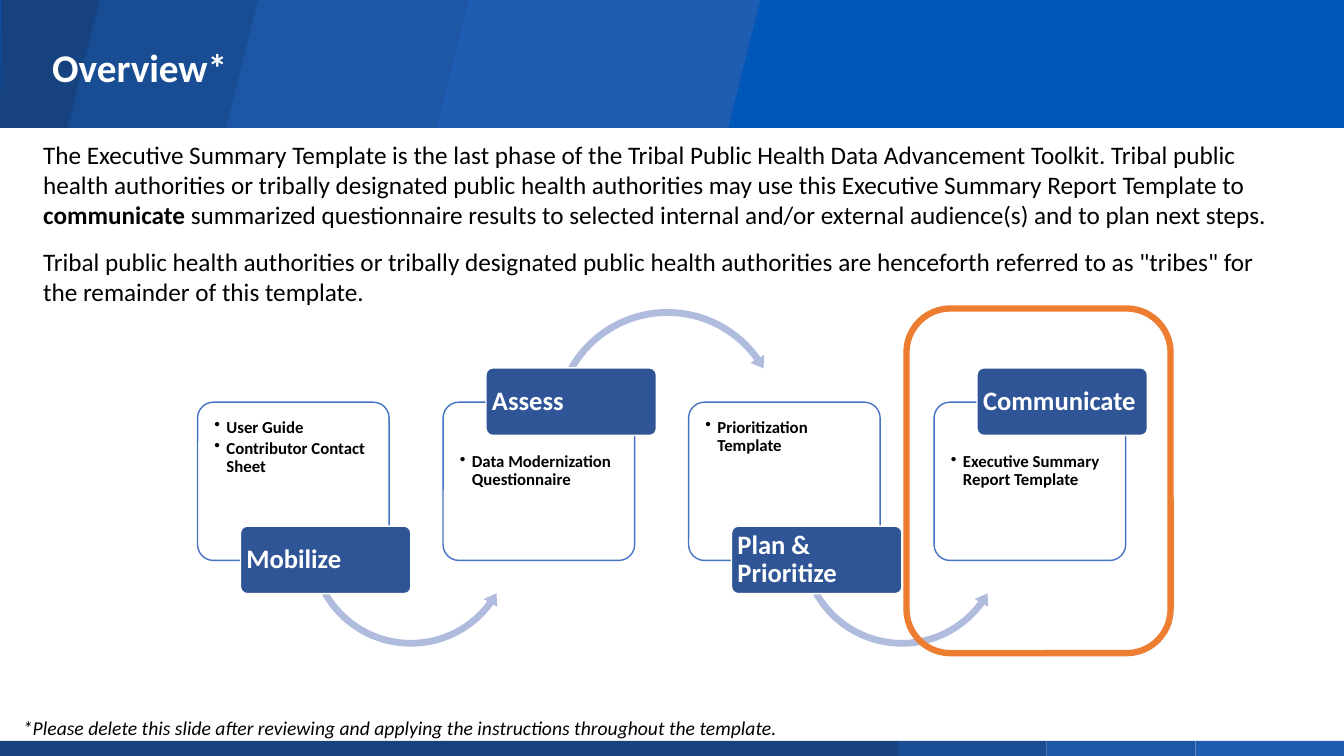
from lxml import etree
from pptx import Presentation
from pptx.dml.color import RGBColor
from pptx.enum.shapes import MSO_SHAPE
from pptx.enum.text import MSO_ANCHOR, PP_ALIGN
from pptx.oxml.ns import qn
from pptx.util import Inches, Pt

RECTANGLE = MSO_SHAPE.RECTANGLE
ROUNDED = MSO_SHAPE.ROUNDED_RECTANGLE
PARALLELOGRAM = MSO_SHAPE.PARALLELOGRAM
ARC_OVER = MSO_SHAPE.CIRCULAR_ARROW
ARC_UNDER = MSO_SHAPE.LEFT_CIRCULAR_ARROW
MIDDLE = MSO_ANCHOR.MIDDLE
TOP = MSO_ANCHOR.TOP
LEFT = PP_ALIGN.LEFT

FONT = "Calibri"
BLUE = "0057B7"
NAVY = "164380"
SHADES = ["194D93", "1C56A4", "1E5DB2"]
BANNER_HEIGHT = 1.27
FIRST_PANEL_LEFT = 1.96
PANEL_PITCH = 2.435
PANEL_TOP = 3.99

PHASES = [
    ("Mobilize", ["User Guide", "Contributor Contact Sheet"]),
    ("Assess", ["Data Modernization Questionnaire"]),
    ("Plan & Prioritize", ["Prioritization Template"]),
    ("Communicate", ["Executive Summary Report Template"]),
]
INTRODUCTION = [
    [
        ("The Executive Summary Template is the last phase of the Tribal Public Health "
         "Data Advancement Toolkit. Tribal public health authorities or tribally "
         "designated public health authorities may use this Executive Summary Report "
         "Template to ", False),
        ("communicate", True),
        (" summarized questionnaire results to selected internal and/or external "
         "audience(s) and to plan next steps.", False),
    ],
    [
        ("Tribal public health authorities or tribally designated public health "
         "authorities are henceforth referred to as \"tribes\" for the remainder of "
         "this template.", False),
    ],
]


def color(value):
    return RGBColor.from_string(value)


def add_block(slide, kind, box, fill=None, line=None, width=1, adjustments=()):
    shape = slide.shapes.add_shape(kind, *map(Inches, box))
    shape.shadow.inherit = False
    if fill:
        shape.fill.solid()
        shape.fill.fore_color.rgb = color(fill)
    else:
        shape.fill.background()
    if line:
        shape.line.color.rgb = color(line)
        shape.line.width = Pt(width)
    else:
        shape.line.fill.background()
    for index, value in enumerate(adjustments):
        shape.adjustments[index] = value
    return shape


def set_frame(shape, anchor, insets=(0.1, 0.05, 0.1, 0.05)):
    frame = shape.text_frame
    frame.word_wrap = True
    frame.vertical_anchor = anchor
    (frame.margin_left, frame.margin_top,
     frame.margin_right, frame.margin_bottom) = map(Inches, insets)
    return frame


def write(frame, paragraphs, size, text_color="000000", italic=False,
          spacing=1.0, after=0):
    for index, runs in enumerate(paragraphs):
        paragraph = frame.add_paragraph() if index else frame.paragraphs[0]
        paragraph.alignment = LEFT
        paragraph.line_spacing = spacing
        paragraph.space_after = Pt(after)
        for text, bold in runs:
            run = paragraph.add_run()
            run.text = text
            run.font.name = FONT
            run.font.size = Pt(size)
            run.font.bold = bold
            run.font.italic = italic
            run.font.color.rgb = color(text_color)


def add_text(slide, box, paragraphs, size, anchor=TOP, **style):
    textbox = slide.shapes.add_textbox(*map(Inches, box))
    write(set_frame(textbox, anchor), paragraphs, size, **style)


def add_bullets(frame):
    for paragraph in frame.paragraphs:
        properties = paragraph._p.get_or_add_pPr()
        properties.set("marL", str(Inches(0.12)))
        properties.set("indent", str(Inches(-0.12)))
        etree.SubElement(properties, qn("a:buChar")).set("char", "•")


def add_banner(slide):
    add_block(slide, RECTANGLE, (0, 0, 13.33, BANNER_HEIGHT), BLUE)
    builder = slide.shapes.build_freeform(0, Inches(BANNER_HEIGHT))
    corners = [(0.01, 0), (1.07, 0), (0.99, BANNER_HEIGHT)]
    builder.add_line_segments([(Inches(x), Inches(y)) for x, y in corners])
    edge = builder.convert_to_shape()
    edge.shadow.inherit = False
    edge.fill.solid()
    edge.fill.fore_color.rgb = color(NAVY)
    edge.line.fill.background()
    stripes = [(0.67, 2.04), (2.24, 2.66), (4.33, 3.21), (8.08, 1.94)]
    for (left, width), fill in zip(stripes, SHADES + [BLUE]):
        add_block(slide, PARALLELOGRAM, (left, 0, width, BANNER_HEIGHT), fill)


def add_footer_bar(slide):
    for index, fill in enumerate(SHADES):
        add_block(slide, RECTANGLE, (8.9 + 1.48 * index, 7.35, 1.48, 0.15), fill)
    add_block(slide, RECTANGLE, (0, 7.35, 8.91, 0.15), NAVY)


def add_phase_arrow(slide, left, label_on_top):
    if label_on_top:
        kind, box = ARC_OVER, (left + 1.05, 3.02, 2.35, 2.35)
        adjustments = (0.029, 3.518, 194.727, 125.755, 0.034)
    else:
        kind, box = ARC_UNDER, (left + 1.06, 4.35, 2.11, 2.11)
        adjustments = (0.032, 3.954, 21.709, 90.245, 0.037)
    add_block(slide, kind, box, "B0BCDE", adjustments=adjustments)


def add_phase(slide, index, name, documents):
    left = FIRST_PANEL_LEFT + PANEL_PITCH * index
    label_on_top = index % 2 == 1
    panel = add_block(slide, ROUNDED, (left, PANEL_TOP, 1.9, 1.57), "FFFFFF",
                      "4472C4", adjustments=(0.1,))
    inset_top = 0.46 if label_on_top else 0.12
    frame = set_frame(panel, TOP, (0.12, inset_top, 0.12, 0.12))
    write(frame, [[(document, True)] for document in documents], 12,
          spacing=0.9, after=2)
    add_bullets(frame)
    if index < len(PHASES) - 1:
        add_phase_arrow(slide, left, label_on_top)
    label_top = 3.65 if label_on_top else 5.22
    label = add_block(slide, ROUNDED, (left + 0.425, label_top, 1.69, 0.67),
                      "2F5597", "FFFFFF", adjustments=(0.1,))
    write(set_frame(label, MIDDLE, (0.04, 0.03, 0.04, 0.03)), [[(name, True)]], 19,
          text_color="FFFFFF", spacing=0.9)


def main():
    presentation = Presentation()
    presentation.slide_width = Inches(13.33)
    presentation.slide_height = Inches(7.5)
    slide = presentation.slides.add_slide(presentation.slide_layouts[6])
    add_banner(slide)
    add_footer_bar(slide)
    add_text(slide, (0.42, 0.17, 11.5, 1.04), [[("Overview*", True)]], 28, MIDDLE,
             text_color="FFFFFF", spacing=0.9)
    add_text(slide, (0.33, 1.33, 12.49, 1.78), INTRODUCTION, 18, after=12)
    for index, (name, documents) in enumerate(PHASES):
        add_phase(slide, index, name, documents)
    add_block(slide, ROUNDED, (8.99, 3.06, 2.62, 3.42), line="ED7D31", width=4.5)
    footnote = ("*Please delete this slide after reviewing and applying the "
                "instructions throughout the template.")
    add_text(slide, (0.13, 7.05, 8.17, 0.34), [[(footnote, False)]], 14, italic=True)
    presentation.save("out.pptx")


if __name__ == "__main__":
    main()
